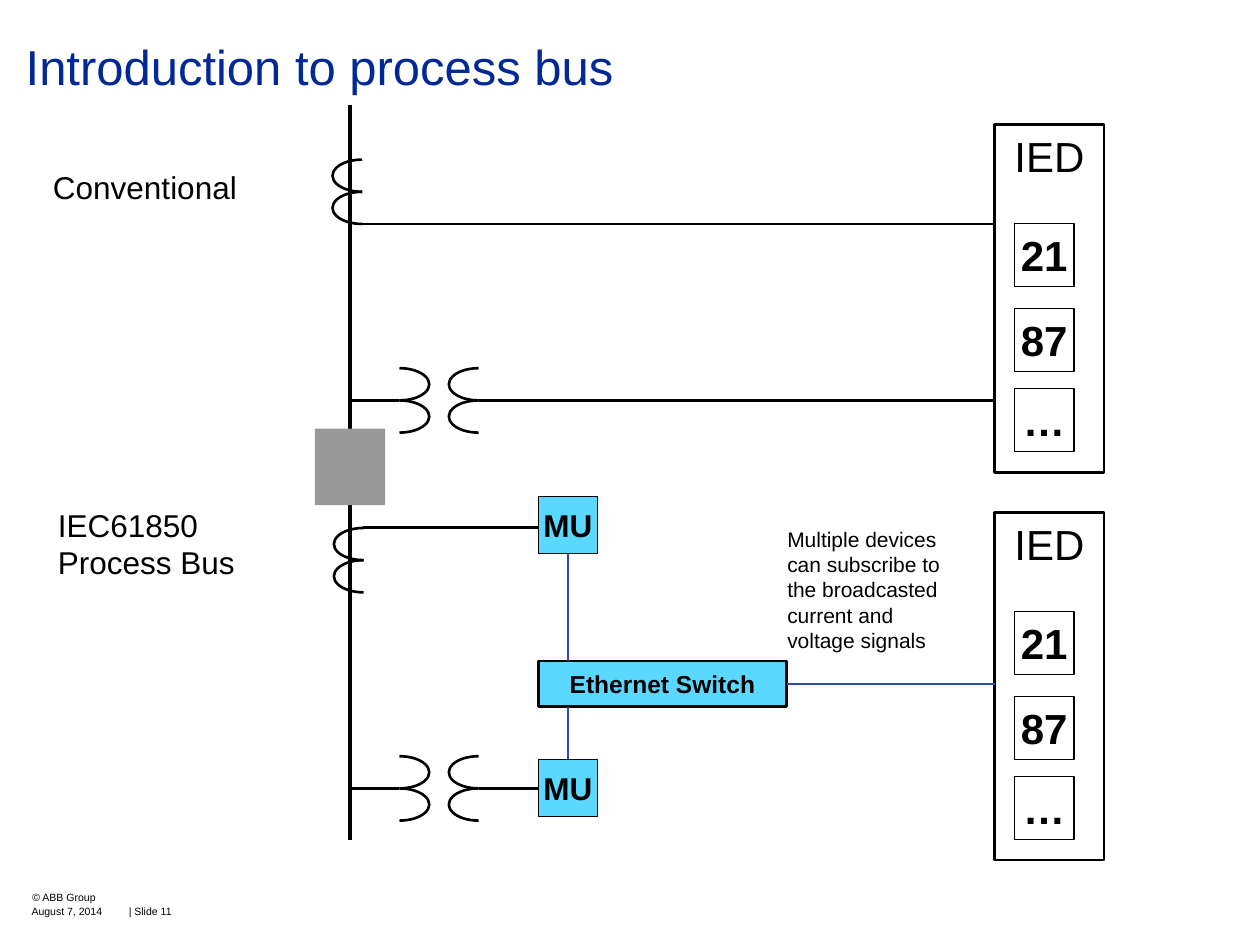
from typing import NamedTuple, Optional

from lxml import etree
from pptx import Presentation
from pptx.dml.color import RGBColor
from pptx.enum.shapes import MSO_CONNECTOR, MSO_SHAPE
from pptx.enum.text import MSO_ANCHOR, PP_ALIGN
from pptx.oxml.ns import qn
from pptx.util import Pt

RECTANGLE, ARC = MSO_SHAPE.RECTANGLE, MSO_SHAPE.ARC
STRAIGHT = MSO_CONNECTOR.STRAIGHT
LEFT, CENTER = PP_ALIGN.LEFT, PP_ALIGN.CENTER
TOP, MIDDLE = MSO_ANCHOR.TOP, MSO_ANCHOR.MIDDLE

BLACK = RGBColor(0x00, 0x00, 0x00)
TITLE_BLUE = RGBColor(0x00, 0x28, 0x97)
NETWORK_BLUE = RGBColor(0x2F, 0x4A, 0xAF)
CYAN = RGBColor(0x5B, 0xD8, 0xFF)
GREY = RGBColor(0x99, 0x99, 0x99)

FONT = "Arial"
BAY_OFFSET = 221.7       # from the conventional bay to the process bus bay
BUS_X = 200.2
VT_PRIMARY_X, VT_SECONDARY_X = 228.3, 273.5
IED_X, IED_TOP = 568.4, 71.3
MU_X, MU_WIDTH, MU_HEIGHT = 307.6, 34, 32.6
SWITCH_TOP, SWITCH_WIDTH, SWITCH_HEIGHT = 377.8, 142, 26
COIL_DEPTH, TURN_HEIGHT = 17, 18.4
DEGREE = 0.6             # arc adjustment units per degree


class Box(NamedTuple):
    left: float
    top: float
    width: float
    height: float


class Wire(NamedTuple):
    start: tuple[float, float]
    end: tuple[float, float]
    color: RGBColor = BLACK
    width: float = 1.5


class Coil(NamedTuple):
    open_x: float
    top: float
    bulges_left: bool


class Label(NamedTuple):
    text: str
    box: Box
    size: float
    color: RGBColor = BLACK
    insets: tuple[float, float, float, float] = (0, 0, 0, 0)
    spacing: Optional[float] = None


def write_text(shape, text: str, *, size: float, color: RGBColor = BLACK,
               bold: bool = False, align: PP_ALIGN = LEFT,
               anchor: MSO_ANCHOR = TOP, wrap: bool = True,
               insets: tuple[float, float, float, float] = (7.2, 3.6, 7.2, 3.6),
               spacing: Optional[float] = None) -> None:
    frame = shape.text_frame
    frame.word_wrap = wrap
    frame.vertical_anchor = anchor
    (frame.margin_left, frame.margin_top,
     frame.margin_right, frame.margin_bottom) = map(Pt, insets)
    frame.text = text
    for paragraph in frame.paragraphs:
        paragraph.alignment = align
        if spacing:
            paragraph.line_spacing = spacing
        paragraph.font.name = FONT
        paragraph.font.size = Pt(size)
        paragraph.font.bold = bold
        paragraph.font.color.rgb = color


def add_label(slide, label: Label) -> None:
    shape = slide.shapes.add_textbox(*map(Pt, label.box))
    write_text(shape, label.text, size=label.size, color=label.color,
               insets=label.insets, spacing=label.spacing)


def add_box(slide, box: Box, fill: Optional[RGBColor] = None,
            line_width: float = 0):
    shape = slide.shapes.add_shape(RECTANGLE, *map(Pt, box))
    shape.shadow.inherit = False
    if fill is None:
        shape.fill.background()
    else:
        shape.fill.solid()
        shape.fill.fore_color.rgb = fill
    if line_width:
        shape.line.color.rgb = BLACK
        shape.line.width = Pt(line_width)
    else:
        shape.line.fill.background()
    return shape


def add_wire(slide, wire: Wire) -> None:
    connector = slide.shapes.add_connector(
        STRAIGHT, *map(Pt, wire.start + wire.end))
    connector.line.color.rgb = wire.color
    connector.line.width = Pt(wire.width)
    etree.SubElement(connector._element.spPr, qn("a:effectLst"))


def add_coil(slide, coil: Coil) -> None:
    """Two stacked half-ellipse turns, open at open_x."""
    angles = (90, 270) if coil.bulges_left else (270, 90)
    for turn in range(2):
        box = Box(coil.open_x - COIL_DEPTH, coil.top + turn * TURN_HEIGHT,
                  2 * COIL_DEPTH, TURN_HEIGHT)
        shape = slide.shapes.add_shape(ARC, *map(Pt, box))
        shape.shadow.inherit = False
        shape.fill.background()
        shape.line.color.rgb = BLACK
        shape.line.width = Pt(1.5)
        for index, angle in enumerate(angles):
            shape.adjustments[index] = angle * DEGREE


def add_ied(slide, top: float) -> None:
    frame = add_box(slide, Box(IED_X, top, 62.6, 198.6), line_width=1.5)
    write_text(frame, "IED", size=24, align=CENTER, wrap=False)
    for function, offset in (("21", 56.5), ("87", 105.1), ("…", 150.6)):
        cell = add_box(slide, Box(IED_X + 11.3, top + offset, 34, 36),
                       line_width=0.75)
        write_text(cell, function, size=24, bold=True, align=CENTER,
                   anchor=MIDDLE, wrap=False)


def add_merging_unit(slide, top: float) -> None:
    unit = add_box(slide, Box(MU_X, top, MU_WIDTH, MU_HEIGHT), CYAN, 0.75)
    write_text(unit, "MU", size=18, bold=True, align=CENTER, anchor=MIDDLE,
               wrap=False)


LABELS = [
    Label("Introduction to process bus", Box(0, 0, 720, 88.6), 28, TITLE_BLUE,
          insets=(14.7, 24.5, 17.3, 0), spacing=0.9),
    Label("Conventional", Box(30.3, 96.2, 110.9, 21.6), 18),
    Label("IEC61850\nProcess Bus", Box(33.1, 288.9, 110.9, 43.9), 18),
    Label("Multiple devices can subscribe to the broadcasted current and "
          "voltage signals", Box(435.5, 300.8, 110.9, 72.7), 12,
          insets=(14.4, 0, 0, 0)),
    # Footer: copyright line above the date and slide number
    Label("© ABB Group", Box(18.5, 509.4, 99.4, 7.2), 6),
    Label("August 7, 2014", Box(18, 517, 46.8, 8.6), 6),
    Label("| Slide 11", Box(73.6, 517, 35.3, 8.6), 6),
]

VT_TOP, VT_MIDDLE = 210.4, 228.8
MU_TOPS = (283.7, 433.9)
MU_CENTER = MU_X + MU_WIDTH / 2
SWITCH_MIDDLE = SWITCH_TOP + SWITCH_HEIGHT / 2

COILS = [Coil(207, 91.2, True), Coil(207.8, 301.7, True)] + [
    Coil(x, VT_TOP + offset, bulges_left)
    for offset in (0, BAY_OFFSET)
    for x, bulges_left in ((VT_PRIMARY_X, False), (VT_SECONDARY_X, True))
]

WIRES = [
    # Busbar sections
    Wire((BUS_X, 60), (BUS_X, 258.5), width=2.25),
    Wire((BUS_X, 281.5), (BUS_X, 480), width=2.25),
    # Current transformer leads
    Wire((206, 128), (IED_X, 128)),
    Wire((207.4, 301.3), (MU_X, 301.3)),
    # Voltage transformer leads
    Wire((BUS_X, VT_MIDDLE), (VT_PRIMARY_X, VT_MIDDLE)),
    Wire((VT_SECONDARY_X, VT_MIDDLE), (IED_X, VT_MIDDLE)),
    Wire((BUS_X, VT_MIDDLE + BAY_OFFSET),
         (VT_PRIMARY_X, VT_MIDDLE + BAY_OFFSET)),
    Wire((VT_SECONDARY_X, VT_MIDDLE + BAY_OFFSET),
         (MU_X, VT_MIDDLE + BAY_OFFSET)),
    # Ethernet links
    Wire((MU_CENTER, MU_TOPS[0] + MU_HEIGHT), (MU_CENTER, SWITCH_TOP),
         NETWORK_BLUE),
    Wire((MU_CENTER, SWITCH_TOP + SWITCH_HEIGHT), (MU_CENTER, MU_TOPS[1]),
         NETWORK_BLUE),
    Wire((MU_X + SWITCH_WIDTH, SWITCH_MIDDLE), (IED_X, SWITCH_MIDDLE),
         NETWORK_BLUE),
]


def main() -> None:
    presentation = Presentation()
    presentation.slide_width, presentation.slide_height = Pt(720), Pt(540)
    slide = presentation.slides.add_slide(presentation.slide_layouts[6])

    for label in LABELS:
        add_label(slide, label)
    for coil in COILS:
        add_coil(slide, coil)
    for top in (IED_TOP, IED_TOP + BAY_OFFSET):
        add_ied(slide, top)
    for top in MU_TOPS:
        add_merging_unit(slide, top)
    switch = add_box(slide, Box(MU_X, SWITCH_TOP, SWITCH_WIDTH, SWITCH_HEIGHT),
                     CYAN, 1.5)
    write_text(switch, "Ethernet Switch", size=14, bold=True, align=CENTER,
               anchor=MIDDLE)
    for wire in WIRES:
        add_wire(slide, wire)
    # Breaker between the busbar sections
    add_box(slide, Box(180, 245, 40.2, 43.7), GREY)

    presentation.save("out.pptx")


if __name__ == "__main__":
    main()
